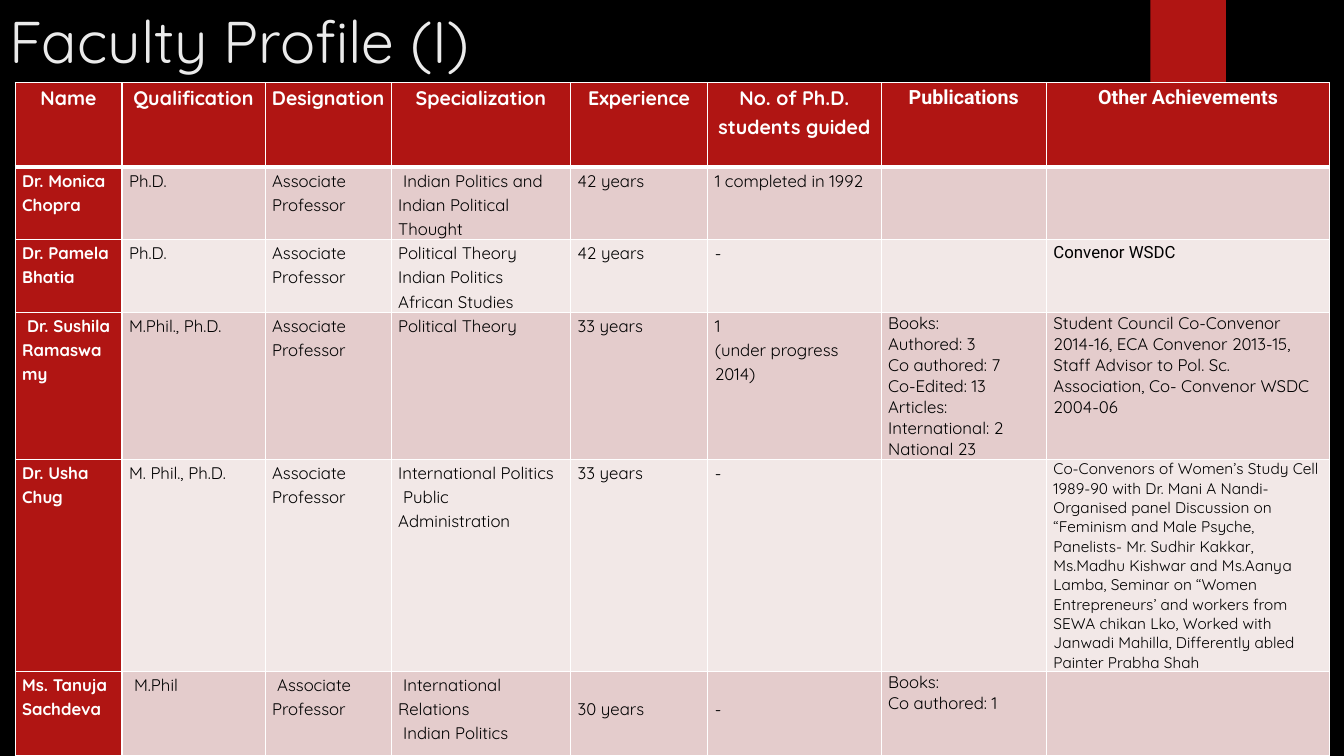
import pptx
import pptx.dml.color
import pptx.enum.shapes
import pptx.enum.text
import pptx.oxml
import pptx.oxml.ns
import pptx.util
from dataclasses import dataclass

Inches = pptx.util.Inches
Pt = pptx.util.Pt
ALIGN = pptx.enum.text.PP_ALIGN


@dataclass(frozen=True)
class Theme:
    font: str = "Quicksand"
    alt_font: str = "Roboto"
    background: str = "000000"
    title: str = "EBEBEB"
    accent: str = "B01513"
    white: str = "FFFFFF"
    ink: str = "000000"
    bands: tuple = ("E4CCCC", "F2E8E7")
    title_size: int = 42
    header_size: int = 14
    body_size: int = 12
    small_size: int = 11


THEME = Theme()
COLUMNS = [1.06, 1.42, 1.25, 1.78, 1.36, 1.72, 1.64, 2.81]
ROWS = [0.84, 0.72, 0.72, 1.46, 2.1, 0.84]
PUBLICATIONS = 6  # the last two columns are set apart from this one on

HEADERS = ["Name", "Qualification", "Designation", "Specialization", "Experience",
           "No. of Ph.D. students guided", "Publications", "Other Achievements"]

# A leading space indents a line; a leading line break starts a cell one line lower
FACULTY = [
    ["Dr. Monica Chopra", "Ph.D.", "Associate Professor",
     " Indian Politics and Indian Political Thought", "42 years",
     "1 completed in 1992", "", ""],
    ["Dr. Pamela Bhatia", "Ph.D.", "Associate Professor",
     "Political Theory\nIndian Politics\nAfrican Studies", "42 years", "-", "",
     "Convenor WSDC"],
    [" Dr. Sushila Ramaswamy", "M.Phil., Ph.D.", "Associate Professor",
     "Political Theory", "33 years", "1\n(under progress 2014)",
     "Books:\nAuthored: 3\nCo authored: 7\nCo-Edited: 13\nArticles:\n"
     "International: 2\nNational 23",
     "Student Council Co-Convenor 2014-16, ECA Convenor 2013-15, Staff Advisor to "
     "Pol. Sc. Association, Co- Convenor WSDC 2004-06"],
    ["Dr. Usha Chug", "M. Phil., Ph.D.", "Associate Professor",
     "International Politics\n Public Administration", "33 years", "-", "",
     "Co-Convenors of Women’s Study Cell 1989-90 with Dr. Mani A Nandi-\n"
     "Organised panel Discussion on “Feminism and Male Psyche, Panelists- "
     "Mr. Sudhir Kakkar, Ms.Madhu Kishwar and Ms.Aanya Lamba, Seminar on “Women "
     "Entrepreneurs’ and workers from SEWA chikan Lko, Worked with Janwadi Mahilla, "
     "Differently abled Painter Prabha Shah"],
    ["Ms. Tanuja Sachdeva", " M.Phil", " Associate Professor",
     " International Relations\n Indian Politics", "\n30 years", "\n-",
     "Books:\nCo authored: 1", ""],
]


def rgb(color):
    return pptx.dml.color.RGBColor.from_string(color)


def write_text(tf, text, *, size, color, font=THEME.font, bold=False,
               align=ALIGN.LEFT, spacing=1.0):
    """Write one paragraph per line of text."""
    tf.word_wrap = True
    for i, line in enumerate(text.split("\n")):
        p = tf.paragraphs[0] if i == 0 else tf.add_paragraph()
        p.alignment = align
        p.line_spacing = spacing
        if line.startswith(" "):
            p._p.get_or_add_pPr().set("indent", str(Inches(0.05)))
        if not line:
            p.font.size = Pt(size)
            continue
        r = p.add_run()
        r.text = line.strip()
        r.font.name = font
        r.font.size = Pt(size)
        r.font.bold = bold
        r.font.color.rgb = rgb(color)


class SlideBuilder:
    def __init__(self, prs, theme):
        self.theme = theme
        self.slide = prs.slides.add_slide(prs.slide_layouts[6])
        fill = self.slide.background.fill
        fill.solid()
        fill.fore_color.rgb = rgb(theme.background)

    def rectangle(self, x, y, w, h, color):
        sp = self.slide.shapes.add_shape(
            pptx.enum.shapes.MSO_SHAPE.RECTANGLE,
            Inches(x), Inches(y), Inches(w), Inches(h))
        sp.shadow.inherit = False
        sp.fill.solid()
        sp.fill.fore_color.rgb = rgb(color)
        sp.line.fill.background()

    def text(self, x, y, w, h, text, **style):
        sp = self.slide.shapes.add_textbox(Inches(x), Inches(y), Inches(w), Inches(h))
        write_text(sp.text_frame, text, **style)

    def table(self, x, y, columns, rows):
        table = self.slide.shapes.add_table(
            len(rows), len(columns), Inches(x), Inches(y),
            Inches(sum(columns)), Inches(sum(rows))).table
        table.horz_banding = False
        for column, width in zip(table.columns, columns):
            column.width = Inches(width)
        for row, height in zip(table.rows, rows):
            row.height = Inches(height)
        return table

    def cell(self, cell, text, fill, bottom=1, top=1, margin=0.07, **style):
        cell.margin_left = cell.margin_right = Inches(margin)
        cell.margin_top = cell.margin_bottom = 0
        if text.startswith("\n"):
            cell.margin_top = Inches(0.24)
            text = text[1:]
        self.borders(cell, L=1, R=1, T=top, B=bottom)
        cell.fill.solid()
        cell.fill.fore_color.rgb = rgb(fill)
        write_text(cell.text_frame, text, **style)

    def borders(self, cell, **widths):
        tc_pr = cell._tc.get_or_add_tcPr()
        for side, width in widths.items():
            tc_pr.append(pptx.oxml.parse_xml(
                f'<a:ln{side} {pptx.oxml.ns.nsdecls("a")} w="{Pt(width)}"><a:solidFill>'
                f'<a:srgbClr val="{self.theme.white}"/></a:solidFill></a:ln{side}>'))


def body_style(row, col):
    """Format of a faculty cell, counted from the first faculty row."""
    if col == 0:
        return dict(fill=THEME.accent, color=THEME.white, bold=True,
                    size=THEME.body_size, spacing=1.15)
    style = dict(fill=THEME.bands[row % 2], color=THEME.ink, size=THEME.body_size,
                 spacing=1.15 if col < PUBLICATIONS else 1.0)
    if FACULTY[row][col] == "Convenor WSDC":
        style.update(font=THEME.alt_font, spacing=1.15)
    elif FACULTY[row][col].startswith("Co-Convenors"):
        style.update(size=THEME.small_size)
    return style


def main():
    prs = pptx.Presentation()
    prs.slide_width, prs.slide_height = Inches(13.33), Inches(7.5)
    page = SlideBuilder(prs, THEME)

    # Ribbon and title
    page.rectangle(11.41, 0, 0.75, 1.25, THEME.accent)
    page.text(0, 0, 11.5, 0.96, "Faculty Profile (I)",
              size=THEME.title_size, color=THEME.title)

    # Faculty table: header row, with narrow margins so each word fits its column
    table = page.table(0.15, 0.82, COLUMNS, ROWS)
    for col, heading in enumerate(HEADERS):
        page.cell(table.cell(0, col), heading, THEME.accent, bottom=3, margin=0.04,
                  size=THEME.header_size, color=THEME.white, bold=True,
                  font=THEME.font if col < PUBLICATIONS else THEME.alt_font,
                  align=ALIGN.CENTER, spacing=1.15)

    # Faculty table: one row per person
    for row, person in enumerate(FACULTY):
        for col, text in enumerate(person):
            page.cell(table.cell(row + 1, col), text, top=3 if row == 0 else 1,
                      **body_style(row, col))

    prs.save("out.pptx")


if __name__ == "__main__":
    main()
